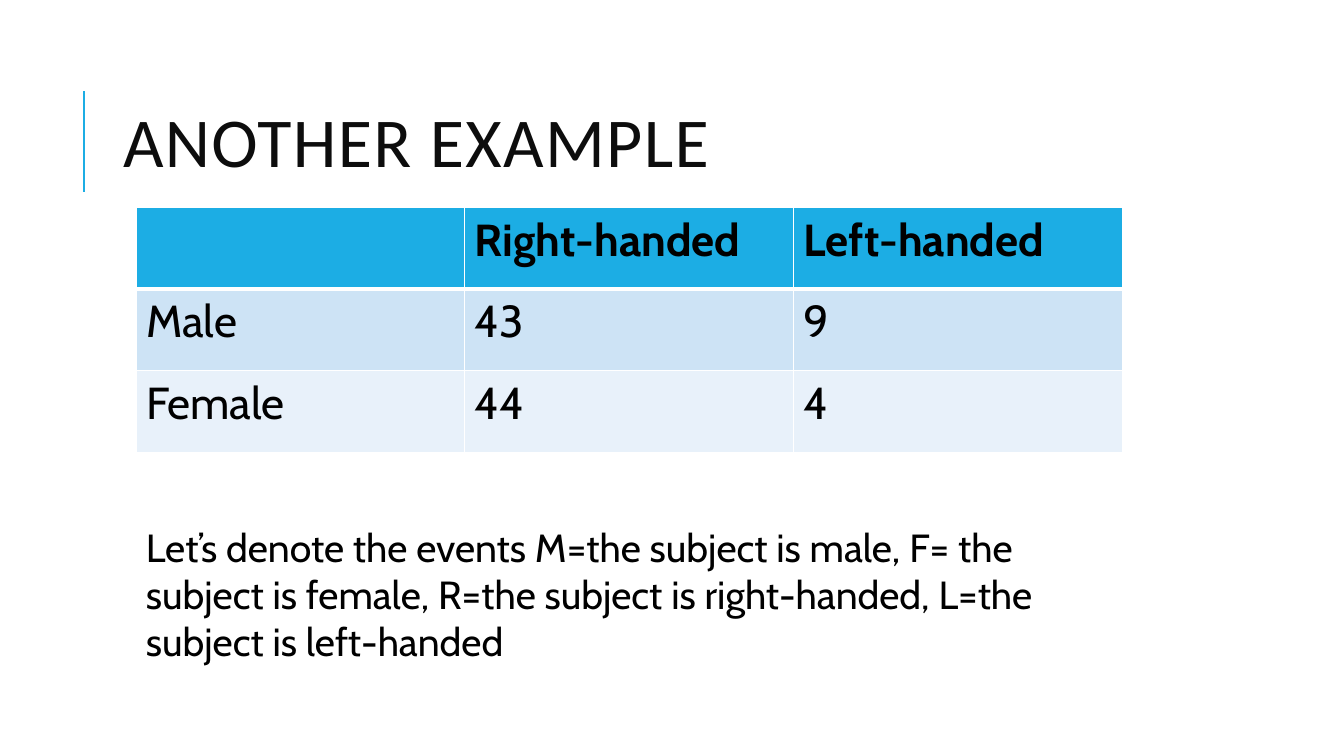
"""Build a slide with a two-way table of handedness by sex and its event names."""
import pptx
import pptx.dml.color
import pptx.enum.shapes
import pptx.enum.text
import pptx.oxml
import pptx.oxml.ns
import pptx.util

inch = pptx.util.Inches
hues = {"head": "1CADE4", "odd": "CDE3F5", "even": "E8F1FA",
        "title": "0D0D0D", "text": "000000", "edge": "FFFFFF"}
left = 1.35
col, row = 3.26, 0.81
rows = [["", "Right-handed", "Left-handed"],
        ["Male", "43", "9"],
        ["Female", "44", "4"]]
note = ("Let’s denote the events M=the subject is male, F= the subject is female, "
        "R=the subject is right-handed, L=the subject is left-handed")


def tint(name):
    return pptx.dml.color.RGBColor.from_string(hues[name])


def style(para, face, size, hue, bold=False):
    font = para.font
    font.name, font.size, font.bold = face, pptx.util.Pt(size), bold
    font.color.rgb = tint(hue)


deck = pptx.Presentation()
deck.slide_width, deck.slide_height = inch(13.33), inch(7.5)
slide = deck.slides.add_slide(deck.slide_layouts[5])

bar = slide.shapes.add_connector(
    pptx.enum.shapes.MSO_CONNECTOR.STRAIGHT,
    inch(0.83), inch(1.9), inch(0.83), inch(0.9))
bar.line.color.rgb = tint("head")
bar.line.width = pptx.util.Pt(1.5)
bar._element.spPr.append(pptx.oxml.parse_xml(
    f'<a:effectLst {pptx.oxml.ns.nsdecls("a")}/>'))

title = slide.shapes.title
title.left, title.top = inch(1.12), inch(0.64)
title.width, title.height = inch(10.63), inch(1.64)
frame = title.text_frame
frame.text = "ANOTHER EXAMPLE"
frame.auto_size = pptx.enum.text.MSO_AUTO_SIZE.NONE
frame.vertical_anchor = pptx.enum.text.MSO_ANCHOR.MIDDLE
para = frame.paragraphs[0]
para.alignment = pptx.enum.text.PP_ALIGN.LEFT
para.line_spacing = 0.8
style(para, "Calibri", 50, "title")
para.runs[0]._r.get_or_add_rPr().set("spc", "100")

grid = slide.shapes.add_table(
    3, 3, inch(left), inch(2.06), inch(3 * col), inch(3 * row)).table
for r, words in enumerate(rows):
    for c, word in enumerate(words):
        cell = grid.cell(r, c)
        cell.text = word
        style(cell.text_frame.paragraphs[0], "Cabin", 32, "text", r == 0)
        props = cell._tc.get_or_add_tcPr()
        for side in "LRTB":
            thick = 3 if (r, side) in [(0, "B"), (1, "T")] else 1
            props.append(pptx.oxml.parse_xml(
                f'<a:ln{side} {pptx.oxml.ns.nsdecls("a")} w="{pptx.util.Pt(thick)}">'
                f'<a:solidFill><a:srgbClr val="{hues["edge"]}"/></a:solidFill>'
                f'</a:ln{side}>'))
        cell.fill.solid()
        cell.fill.fore_color.rgb = tint(["head", "odd", "even"][r])

box = slide.shapes.add_textbox(inch(left), inch(5.14), inch(9.56), inch(1.51))
frame = box.text_frame
frame.word_wrap = True
frame.auto_size = pptx.enum.text.MSO_AUTO_SIZE.SHAPE_TO_FIT_TEXT
frame.text = note
style(frame.paragraphs[0], "Cabin", 28, "text")

deck.save("out.pptx")
